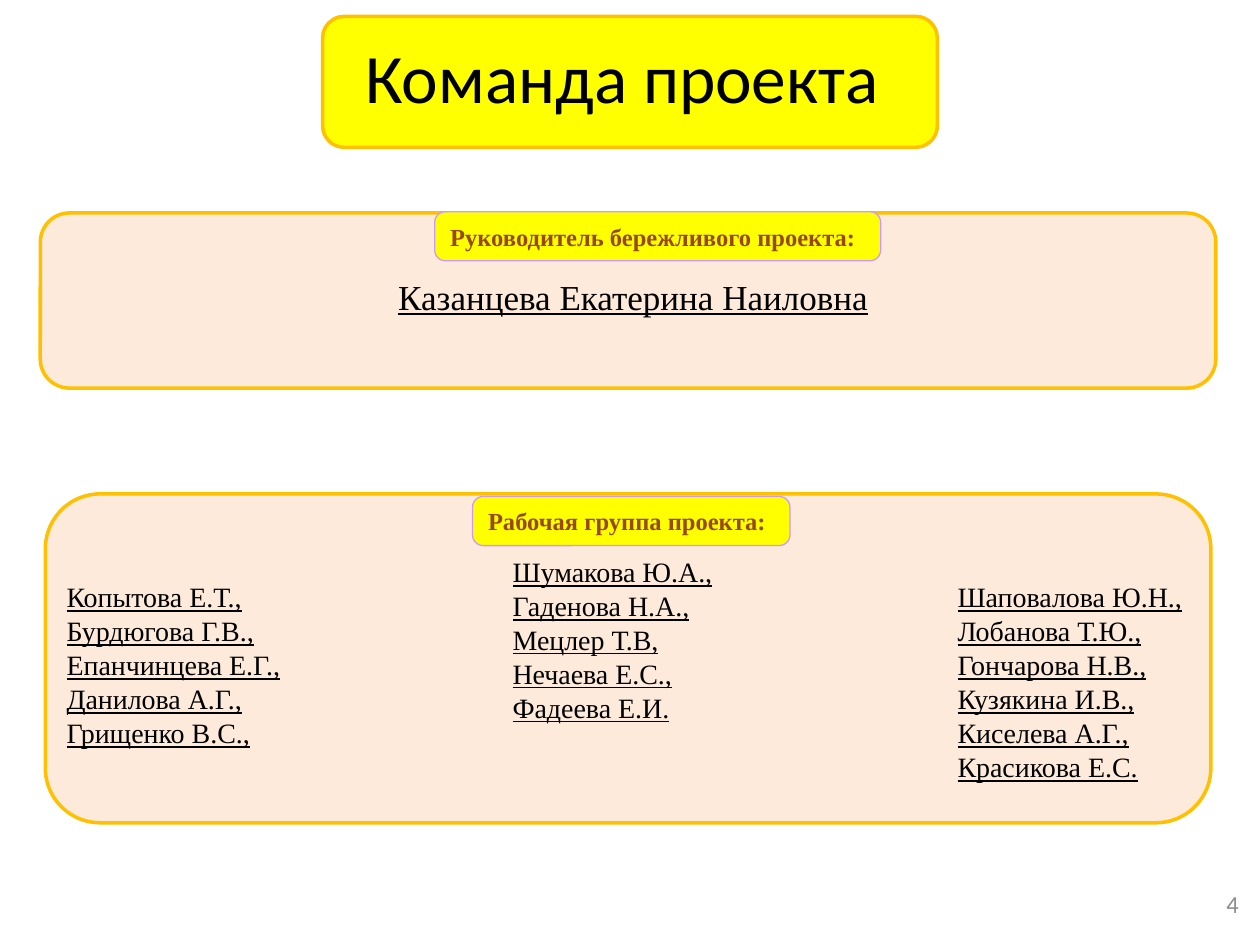
import pptx
import pptx.util
import pptx.dml.color
import pptx.enum.shapes
import pptx.enum.text

Inches, Pt = pptx.util.Inches, pptx.util.Pt
ALIGN = pptx.enum.text.PP_ALIGN
ANCHOR = pptx.enum.text.MSO_ANCHOR
ROUND = pptx.enum.shapes.MSO_SHAPE.ROUNDED_RECTANGLE
SERIF = "Times New Roman"

TITLE = "Команда проекта "
PANELS = [
    ((0.36, 3.92, 9.25, 2.61), "FDEADA"),
    ((0.32, 1.69, 9.33, 1.39), "FDEADA"),
    ((2.56, 0.13, 4.88, 1.04), "FFFF00"),
]
LABELS = [
    ("Руководитель бережливого проекта:", (3.45, 1.68, 3.54, 0.39)),
    ("Рабочая группа проекта:", (3.75, 3.94, 2.52, 0.39)),
]
LEADER = ["Казанцева Екатерина Наиловна"]
TEAM = [
    ((0.43, 4.55, 3, 1.45), 0.1, [
        "Копытова Е.Т.,", "Бурдюгова Г.В.,", "Епанчинцева Е.Г.,",
        "Данилова А.Г.,", "Грищенко В.С.,"]),
    ((3.97, 4.35, 2.93, 1.45), 0.1, [
        "Шумакова Ю.А.,", "Гаденова Н.А.,", "Мецлер Т.В,",
        "Нечаева Е.С.,", "Фадеева Е.И."]),
    ((7.6, 4.6, 2.2, 1.62), 0, [
        "Шаповалова Ю.Н.,", "Лобанова Т.Ю.,", "Гончарова Н.В.,",
        "Кузякина И.В.,", "Киселева А.Г.,", "Красикова Е.С."]),
]
NAME_FONT = {"name": SERIF, "underline": True}
LABEL_FONT = {"name": SERIF, "size": Pt(14), "bold": True}


def rgb(value):
    return pptx.dml.color.RGBColor.from_string(value)


def box(at):
    return [Inches(v) for v in at]


def write(sp, lines, font, color, align=ALIGN.LEFT, anchor=ANCHOR.MIDDLE,
          inset=(0.1, 0.05), spacing=None):
    tf = sp.text_frame
    tf.word_wrap = True
    tf.auto_size = pptx.enum.text.MSO_AUTO_SIZE.NONE
    tf.vertical_anchor = anchor
    tf.margin_left = tf.margin_right = Inches(inset[0])
    tf.margin_top = tf.margin_bottom = Inches(inset[1])
    for i, line in enumerate(lines):
        p = tf.add_paragraph() if i else tf.paragraphs[0]
        p.alignment = align
        if spacing:
            p.line_spacing = spacing
        r = p.add_run()
        r.text = line
        for key, value in font.items():
            setattr(r.font, key, value)
        r.font.color.rgb = rgb(color)


def rounded(s, at, fill, line, width):
    sp = s.shapes.add_shape(ROUND, *box(at))
    sp.shadow.inherit = False
    sp.fill.solid()
    sp.fill.fore_color.rgb = rgb(fill)
    sp.line.color.rgb = rgb(line)
    sp.line.width = Pt(width)
    return sp


def main():
    prs = pptx.Presentation()
    prs.slide_width, prs.slide_height = Inches(10), Inches(7.5)
    s = prs.slides.add_slide(prs.slide_layouts[5])

    for at, fill in PANELS:
        rounded(s, at, fill, "FFC000", 2)

    title = s.shapes.title
    title.left, title.top, title.width, title.height = box((0.27, 0.36, 9.46, 0.48))
    title.element.getparent().append(title.element)
    write(title, [TITLE], {"name": "Calibri", "size": Pt(39.6)}, "000000", ALIGN.CENTER)

    sp = s.shapes.add_textbox(*box((3.15, 2.18, 3.75, 0.34)))
    write(sp, LEADER, NAME_FONT | {"size": Pt(20)}, "000000", ALIGN.CENTER,
          ANCHOR.TOP, (0, 0), Pt(24.4))

    sp = s.shapes.add_textbox(*box((7.6, 6.97, 2.33, 0.4)))
    write(sp, ["4"], {"name": "Calibri", "size": Pt(14)}, "8C8C8C", ALIGN.RIGHT)

    for text, at in LABELS:
        sp = rounded(s, at, "FFFF00", "CC99FF", 0.75)
        sp.adjustments[0] = 0.22
        write(sp, [text], LABEL_FONT, "984807")

    for at, inset, names in TEAM:
        sp = s.shapes.add_textbox(*box(at))
        write(sp, names, NAME_FONT | {"size": Pt(16)}, "000000",
              anchor=ANCHOR.TOP, inset=(inset, inset / 2), spacing=Pt(19.4))

    prs.save("out.pptx")


if __name__ == "__main__":
    main()
